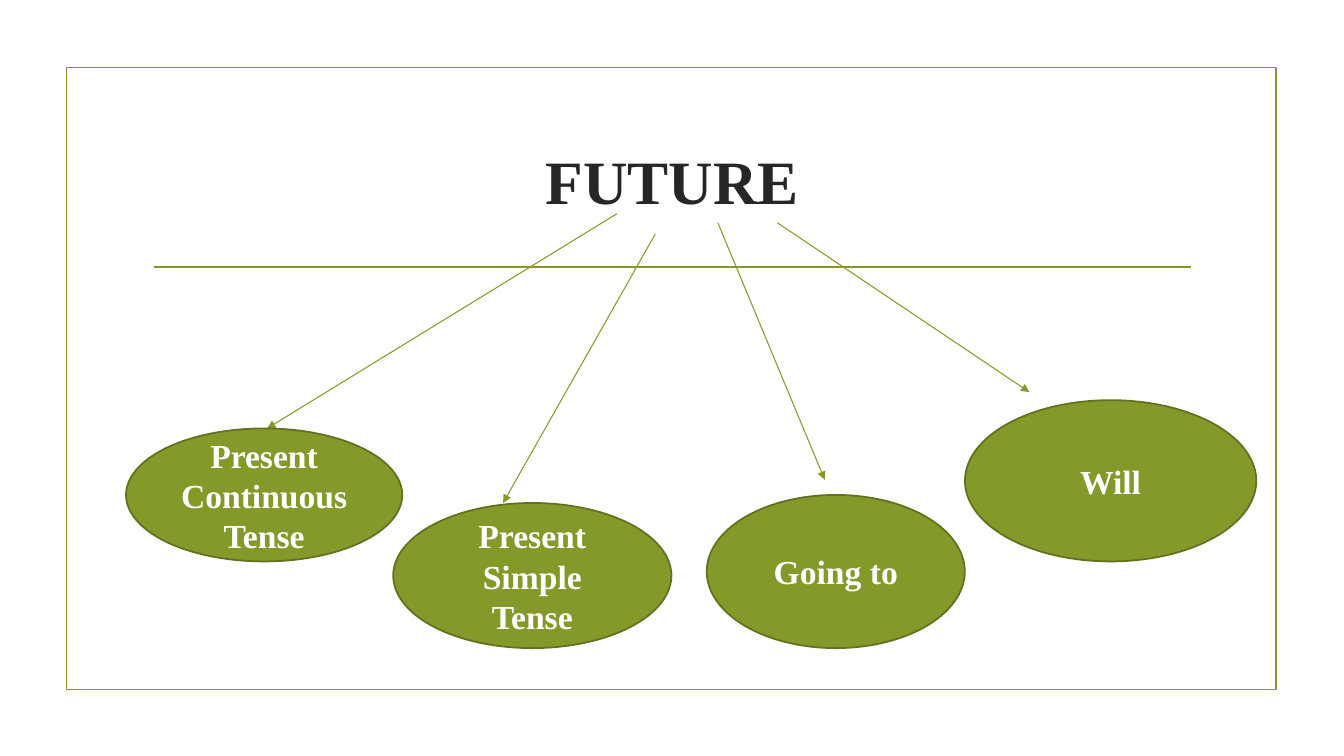
"""Build a slide that maps the English ways of expressing the future."""
from typing import NamedTuple

from lxml import etree
from pptx import Presentation
from pptx.dml.color import RGBColor
from pptx.enum.shapes import MSO_CONNECTOR, MSO_SHAPE
from pptx.enum.text import MSO_ANCHOR, PP_ALIGN
from pptx.oxml.ns import qn
from pptx.shapes.autoshape import Shape
from pptx.slide import Slide
from pptx.util import Emu, Pt

EMU_PER_PX = 9144
SLIDE_WIDTH, SLIDE_HEIGHT = 1333, 750
FONT_NAME = "Times New Roman"
GREEN = RGBColor(0x83, 0x99, 0x2A)
DARK_GREEN = RGBColor(0x61, 0x71, 0x1F)
CHARCOAL = RGBColor(0x26, 0x26, 0x26)
WHITE = RGBColor(0xFF, 0xFF, 0xFF)
RECTANGLE = MSO_SHAPE.RECTANGLE
OVAL = MSO_SHAPE.OVAL
STRAIGHT = MSO_CONNECTOR.STRAIGHT
MIDDLE = MSO_ANCHOR.MIDDLE
CENTER = PP_ALIGN.CENTER


class Box(NamedTuple):
    left: int
    top: int
    width: int
    height: int


class Segment(NamedTuple):
    start_x: int
    start_y: int
    end_x: int
    end_y: int


class Tense(NamedTuple):
    label: str
    box: Box
    arrow: Segment


FRAME = Box(66, 67, 1200, 617)
TITLE_BOX = Box(142, 107, 1050, 143)
TITLE_RULE = Segment(153, 265, 1181, 265)
TENSES = (
    Tense("Present Continuous Tense", Box(125, 425, 274, 132), Segment(612, 212, 265, 425)),
    Tense("Present Simple Tense", Box(390, 499, 276, 144), Segment(650, 232, 499, 499)),
    Tense("Going to", Box(701, 491, 256, 152), Segment(712, 221, 818, 476)),
    Tense("Will", Box(957, 397, 289, 160), Segment(771, 221, 1021, 389)),
)


def px(length: int) -> Emu:
    """Convert pixels to EMU."""
    return Emu(length * EMU_PER_PX)


def write_text(shape: Shape, text: str, *, size: int, color: RGBColor) -> None:
    """Fill a shape with bold, centred text."""
    frame = shape.text_frame
    frame.word_wrap = True
    frame.vertical_anchor = MIDDLE
    paragraph = frame.paragraphs[0]
    paragraph.alignment = CENTER
    run = paragraph.add_run()
    run.text = text
    run.font.name = FONT_NAME
    run.font.size = Pt(size)
    run.font.bold = True
    run.font.color.rgb = color


def add_outlined(slide: Slide, kind: MSO_SHAPE, box: Box, line: RGBColor,
                 fill: RGBColor | None = None) -> Shape:
    """Add an outlined shape, filled when a colour is given."""
    shape = slide.shapes.add_shape(kind, *map(px, box))
    shape.shadow.inherit = False
    shape.line.color.rgb = line
    shape.line.width = Pt(1.25)
    if fill is None:
        shape.fill.background()
    else:
        shape.fill.solid()
        shape.fill.fore_color.rgb = fill
    return shape


def add_line(slide: Slide, segment: Segment, width: float, arrow: bool = False) -> None:
    """Add a straight green line, optionally ending in an arrowhead."""
    connector = slide.shapes.add_connector(STRAIGHT, *map(px, segment))
    connector.line.color.rgb = GREEN
    connector.line.width = Pt(width)
    if arrow:
        outline = connector.line._get_or_add_ln()
        etree.SubElement(outline, qn("a:tailEnd"), type="triangle")
    etree.SubElement(connector._element.spPr, qn("a:effectLst"))


def add_title(slide: Slide, text: str) -> None:
    """Place and format the title placeholder."""
    title = slide.shapes.title
    title.left, title.top, title.width, title.height = map(px, TITLE_BOX)
    write_text(title, text, size=44, color=CHARCOAL)


def main() -> None:
    """Build and save the presentation."""
    presentation = Presentation()
    presentation.slide_width = px(SLIDE_WIDTH)
    presentation.slide_height = px(SLIDE_HEIGHT)
    slide = presentation.slides.add_slide(presentation.slide_layouts[5])
    add_outlined(slide, RECTANGLE, FRAME, GREEN)
    add_line(slide, TITLE_RULE, 1.25)
    add_title(slide, "FUTURE")
    for tense in TENSES:
        add_line(slide, tense.arrow, 0.75, arrow=True)
    for tense in TENSES:
        oval = add_outlined(slide, OVAL, tense.box, DARK_GREEN, GREEN)
        write_text(oval, tense.label, size=24, color=WHITE)
    presentation.save("out.pptx")


if __name__ == "__main__":
    main()
